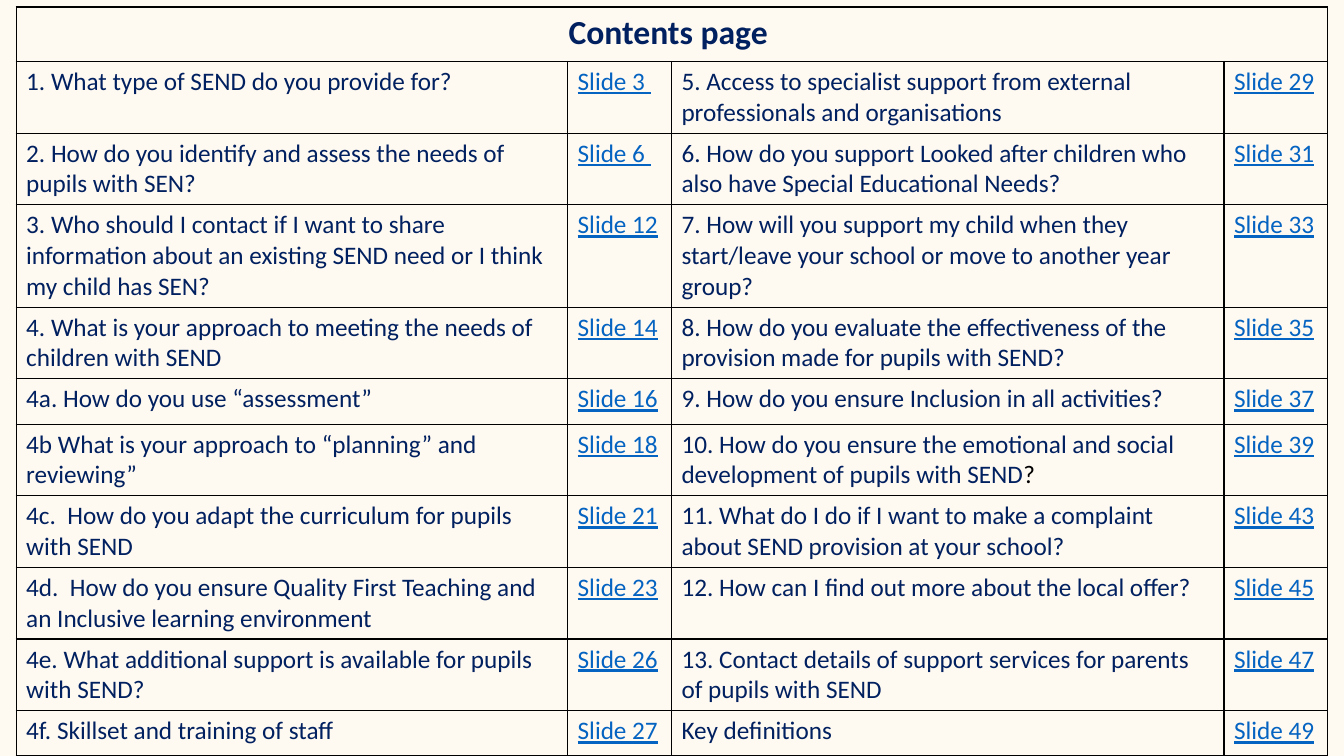
from lxml.etree import SubElement
from pptx import Presentation
from pptx.dml.color import RGBColor
from pptx.enum.text import PP_ALIGN as Align
from pptx.oxml.ns import qn
from pptx.util import Inches, Pt

CREAM = RGBColor(0xFF, 0xFA, 0xF1)
NAVY = RGBColor(0x00, 0x20, 0x60)
LINK_BLUE = RGBColor(0x05, 0x63, 0xC1)
BLACK = RGBColor(0x00, 0x00, 0x00)

COLUMN_WIDTHS = (5.47, 1.03, 5.48, 1.03)
TITLE_HEIGHT = 0.54
HEIGHT_BY_LINES = {1: 0.45, 2: 0.71, 3: 1.01}

CONTENTS = [
    (2, "1. What type of SEND do you provide for?", "Slide 3 ",
     "5. Access to specialist support from external professionals and organisations", "Slide 29"),
    (2, "2. How do you identify and assess the needs of pupils with SEN?", "Slide 6 ",
     "6. How do you support Looked after children who also have Special Educational Needs?", "Slide 31"),
    (3, "3. Who should I contact if I want to share information about an existing SEND need "
        "or I think my child has SEN?", "Slide 12",
     "7. How will you support my child when they start/leave your school or move to another year group?",
     "Slide 33"),
    (2, "4. What is your approach to meeting the needs of children with SEND", "Slide 14",
     "8. How do you evaluate the effectiveness of the provision made for pupils with SEND?", "Slide 35"),
    (1, "4a. How do you use “assessment”", "Slide 16",
     "9. How do you ensure Inclusion in all activities?", "Slide 37"),
    (2, "4b What is your approach to “planning” and reviewing”", "Slide 18",
     "10. How do you ensure the emotional and social development of pupils with SEND", "Slide 39"),
    (2, "4c.  How do you adapt the curriculum for pupils with SEND", "Slide 21",
     "11. What do I do if I want to make a complaint about SEND provision at your school?", "Slide 43"),
    (2, "4d.  How do you ensure Quality First Teaching and an Inclusive learning environment", "Slide 23",
     "12. How can I find out more about the local offer?", "Slide 45"),
    (2, "4e. What additional support is available for pupils with SEND?", "Slide 26",
     "13. Contact details of support services for parents of pupils with SEND", "Slide 47"),
    (1, "4f. Skillset and training of staff", "Slide 27", "Key definitions", "Slide 49"),
]


def add_run(paragraph, text, color=NAVY, size=18, bold=False, underline=False):
    run = paragraph.add_run()
    run.text = text
    run.font.name = "Calibri"
    run.font.size = Pt(size)
    run.font.bold = bold
    run.font.underline = underline
    run.font.color.rgb = color


def add_borders(cell):
    properties = cell._tc.get_or_add_tcPr()
    for position, side in enumerate(("a:lnL", "a:lnR", "a:lnT", "a:lnB")):
        line = properties.makeelement(qn(side), {"w": str(Pt(1))})
        properties.insert(position, line)
        fill = SubElement(line, qn("a:solidFill"))
        SubElement(fill, qn("a:srgbClr"), val=str(BLACK))


def add_contents_table(slide):
    heights = [TITLE_HEIGHT] + [HEIGHT_BY_LINES[row[0]] for row in CONTENTS]
    table = slide.shapes.add_table(
        len(heights), len(COLUMN_WIDTHS), Inches(0.16), Inches(0.07),
        Inches(sum(COLUMN_WIDTHS)), Inches(sum(heights))).table
    table.first_row = False
    table.horz_banding = False
    for column, width in zip(table.columns, COLUMN_WIDTHS):
        column.width = Inches(width)
    for row, height in zip(table.rows, heights):
        row.height = Inches(height)
    for cell in table.iter_cells():
        cell.fill.background()
        add_borders(cell)
    return table


def fill_contents_table(table):
    title_cell = table.cell(0, 0)
    title_cell.merge(table.cell(0, len(COLUMN_WIDTHS) - 1))
    title = title_cell.text_frame.paragraphs[0]
    title.alignment = Align.CENTER
    add_run(title, "Contents page ", size=24, bold=True)

    for row_index, (_, *texts) in enumerate(CONTENTS, start=1):
        for column_index, text in enumerate(texts):
            paragraph = table.cell(row_index, column_index).text_frame.paragraphs[0]
            is_link = column_index % 2 == 1
            add_run(paragraph, text, LINK_BLUE if is_link else NAVY, underline=is_link)
            if text.startswith("10."):
                add_run(paragraph, "?", BLACK)


def main():
    presentation = Presentation()
    presentation.slide_width = Inches(13.33)
    presentation.slide_height = Inches(7.5)
    slide = presentation.slides.add_slide(presentation.slide_layouts[6])
    slide.background.fill.solid()
    slide.background.fill.fore_color.rgb = CREAM
    fill_contents_table(add_contents_table(slide))
    presentation.save("out.pptx")


if __name__ == "__main__":
    main()
